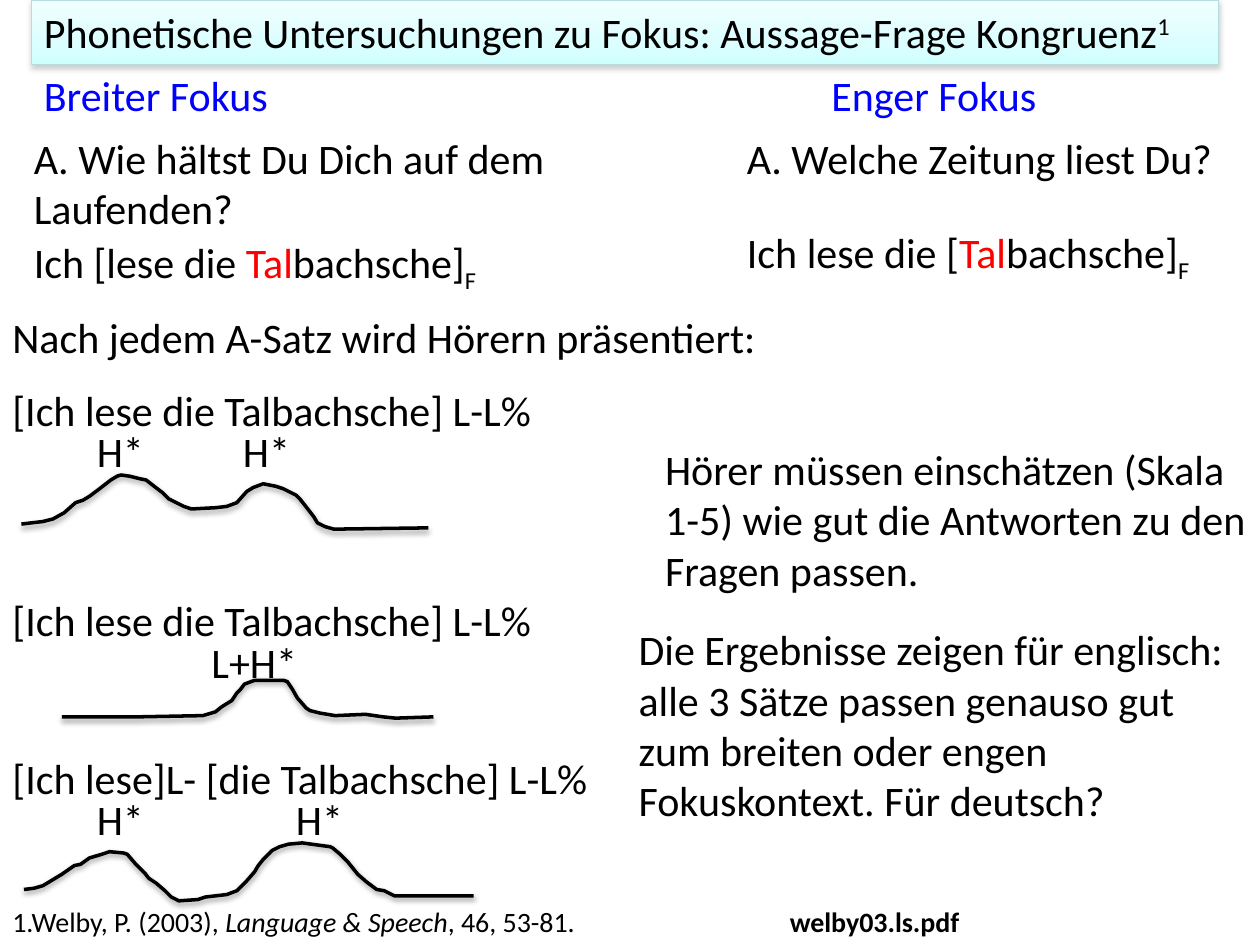
from pptx import Presentation
from pptx import util as u
from pptx.dml.color import RGBColor
from pptx.enum import shapes, text
from pptx.oxml import parse_xml
from pptx.oxml.ns import qn
from copy import deepcopy

PX = 9144  # 100 px to the inch
BLUE, RED, BLACK = "0000FF", "FF0000", "000000"
TAL = ("Tal", {"color": RED})
LOW = ("F", {"base": -25})
SATZ = "[Ich lese die Talbachsche] L-L%"

# Title: box, gradient stops (position, colour), runs
TITLE = (25, 0, 942, 51)
STOPS = [(0, "F0FFFF"), (0.65, "DDFEFF"), (1, "CFFFFF")]
HEAD = ["Phonetische Untersuchungen zu Fokus: Aussage-Frage Kongruenz",
        ("1", {"base": 30})]

# Text: left, top, width, height, runs, format
TEXTS = [
    (25, 50, 208, 51, ["Breiter Fokus"], {"color": BLUE}),
    (650, 50, 208, 51, ["Enger Fokus"], {"color": BLUE}),
    (17, 100, 467, 91, ["A. Wie hältst Du Dich auf dem Laufenden?"], {}),
    (583, 100, 417, 51, ["A. Welche Zeitung liest Du?"], {}),
    (17, 183, 387, 51, ["Ich [lese die ", TAL, "bachsche]", LOW], {"wrap": False}),
    (583, 175, 387, 51, ["Ich lese die [", TAL, "bachsche]", LOW], {"wrap": False}),
    (0, 242, 633, 51, ["Nach jedem A-Satz wird Hörern präsentiert:"], {}),
    (518, 347, 483, 131, ["Hörer müssen einschätzen (Skala 1-5) wie gut die "
                          "Antworten zu den Fragen passen."], {}),
    (497, 490, 492, 172, ["Die Ergebnisse zeigen für englisch: alle 3 Sätze passen "
                          "genauso gut zum breiten oder engen Fokuskontext. "
                          "Für deutsch?"], {}),
    (0, 713, 500, 37, ["1.Welby, P. (2003), ", ("Language & Speech", {"italic": True}),
                       ", 46, 53-81."], {"size": 16}),
    (617, 713, 175, 37, ["welby03.ls.pdf"], {"size": 16, "bold": True}),
]

# Contours: sentence, top, width, accents (left, width, label), pitch points
TUNES = [
    (SATZ, 300, 467, [(67, 58, "H*"), (183, 58, "H*")],
     [(17, 416), (25, 415), (34, 414), (42, 412), (51, 407), (60, 399), (66, 397),
      (71, 394), (79, 388), (88, 381), (93, 378), (96, 377), (103, 377.5), (111, 380),
      (116, 381), (125, 388), (129, 391), (134, 396), (146, 402), (152, 404),
      (171, 403), (180, 402), (188, 399), (196, 390), (201, 387), (209, 384),
      (219, 386), (225, 388), (235, 393), (238, 396), (242, 401), (249, 410),
      (252, 415), (258, 418), (265, 420), (340, 419)]),
    (SATZ, 467, 475, [(158, 100, "L+H*")],
     [(49, 569), (109, 569), (161, 568), (171, 565), (176, 561), (184, 556), (188, 550),
      (191, 547), (194, 543), (202, 540), (206, 539.5), (225, 540), (228, 541),
      (232, 547), (236, 554), (243, 562), (246, 564), (254, 566.5), (266, 567.5),
      (290, 567), (304, 569), (314, 569.5), (344, 569)]),
    ("[Ich lese]L- [die Talbachsche] L-L%", 592, 492,
     [(67, 58, "H*"), (225, 58, "H*")],
     [(19, 706), (27, 705), (34, 703), (39, 700), (49, 694), (59, 687), (64, 686),
      (71, 681), (81, 678), (87, 676), (98, 677), (101, 678), (107, 685), (115, 693),
      (118, 697), (124, 701), (131, 707), (136, 712), (142, 715), (157, 714),
      (163, 712), (180, 710), (188, 707), (196, 699), (202, 692), (205, 687),
      (209, 682), (216, 675), (222, 672), (229, 670), (240, 669), (247, 670),
      (262, 672), (264, 673), (270, 678), (276, 684), (284, 694), (291, 700),
      (299, 706), (305, 707), (313, 711), (376, 711)]),
]

prs = Presentation()
prs.slide_width, prs.slide_height = 1000 * PX, 750 * PX
slide = prs.slides.add_slide(prs.slide_layouts[6])


def rgb(code):
    return RGBColor.from_string(code)


def write(shape, runs, wrap=True, **base):
    frame = shape.text_frame
    frame.word_wrap = wrap
    frame.vertical_anchor = text.MSO_ANCHOR.TOP
    para = frame.paragraphs[0]
    para.alignment = text.PP_ALIGN.LEFT
    for item in runs:
        words, own = (item, {}) if isinstance(item, str) else item
        fmt = {"name": "Calibri", "size": 24, "color": BLACK, **base, **own}
        run = para.add_run()
        run.text = words
        run.font.color.rgb = rgb(fmt.pop("color"))
        shift = fmt.pop("base", 0)
        if shift:
            run.font._element.set("baseline", str(shift * 1000))
        fmt["size"] = u.Pt(fmt["size"])
        for key, val in fmt.items():
            setattr(run.font, key, val)


def label(left, top, width, height, runs, fmt):
    box = slide.shapes.add_textbox(*(n * PX for n in (left, top, width, height)))
    write(box, runs, **fmt)


def trim(shape, line, width, shade):
    """Set the outline and a soft shadow below the shape."""
    shape.line.color.rgb = rgb(line)
    shape.line.width = u.Pt(width)
    shape.shadow.inherit = False
    shape._element.spPr.find(qn("a:effectLst")).append(parse_xml(
        '<a:outerShdw xmlns:a="http://schemas.openxmlformats.org/drawingml/2006/main" '
        'blurRad="40000" dist="20000" dir="5400000" rotWithShape="0">'
        f'<a:srgbClr val="{shade}"><a:alpha val="38000"/></a:srgbClr></a:outerShdw>'))


# Title bar
bar = slide.shapes.add_shape(shapes.MSO_SHAPE.RECTANGLE, *(n * PX for n in TITLE))
bar.fill.gradient()
bar.fill.gradient_angle = 270
stops = bar._element.spPr.find(qn("a:gradFill")).find(qn("a:gsLst"))
stops.append(deepcopy(stops[-1]))
for stop, (pos, code) in zip(bar.fill.gradient_stops, STOPS):
    stop.position = pos
    stop.color.rgb = rgb(code)
trim(bar, "B6DCDF", 0.75, "808080")
write(bar, HEAD)

# Questions, answers, comments and source
for row in TEXTS:
    label(*row)

# Sentences with accents and pitch contours
for words, top, width, accents, points in TUNES:
    label(0, top, width, 51, [words], {})
    for left, wide, mark in accents:
        label(left, top + 33, wide, 51, [mark], {})
    pen = slide.shapes.build_freeform(*points[0], scale=PX)
    pen.add_line_segments(points[1:], close=False)
    curve = pen.convert_to_shape()
    curve.fill.background()
    trim(curve, BLACK, 2, BLACK)

prs.save("out.pptx")
